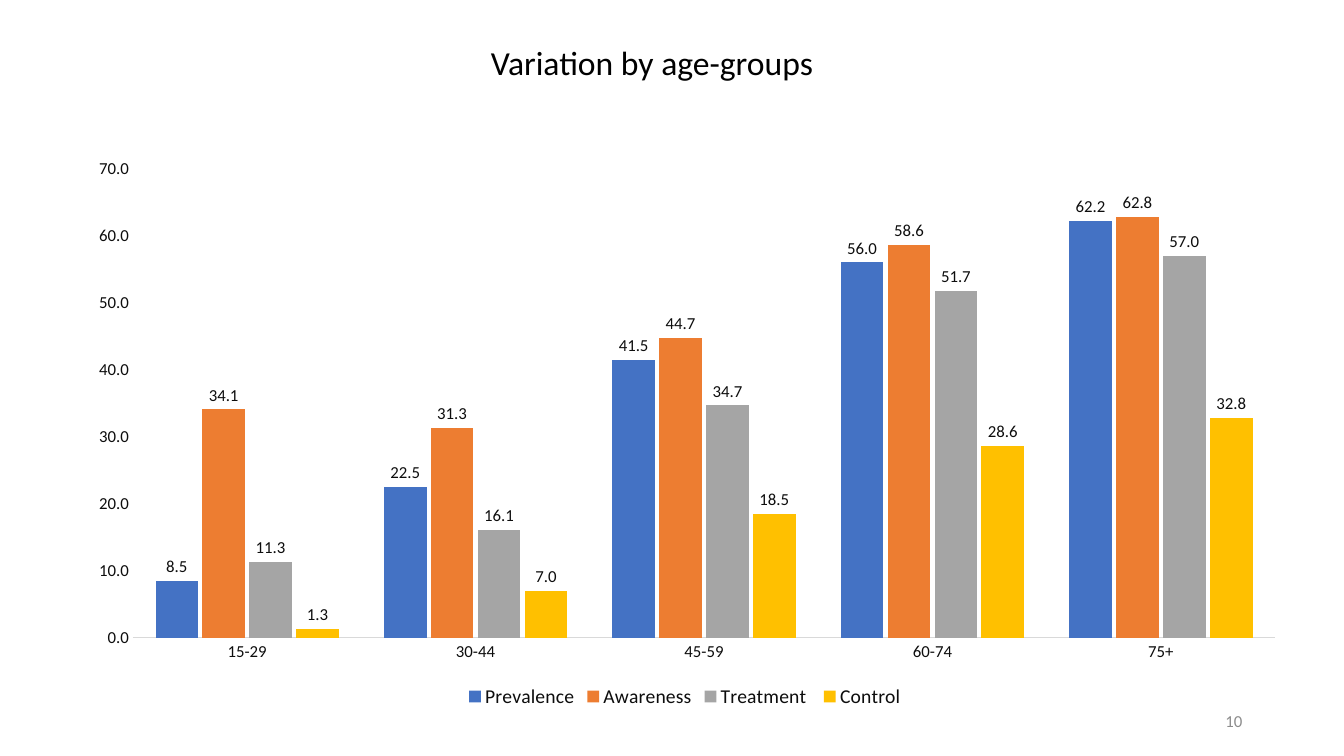
"""Build the slide on variation by age-groups."""
from pptx import Presentation
from pptx.chart.data import CategoryChartData
from pptx.dml.color import RGBColor
from pptx.enum.chart import XL_CHART_TYPE as ChartType
from pptx.enum.chart import XL_LABEL_POSITION as LabelPosition
from pptx.enum.chart import XL_LEGEND_POSITION as LegendPosition
from pptx.enum.chart import XL_TICK_MARK as TickMark
from pptx.enum.text import MSO_ANCHOR as Anchor
from pptx.enum.text import PP_ALIGN as Align
from pptx.util import Inches, Pt

FONT = "Calibri"
COLORS = {"title": "000000", "text": "0D0D0D", "number": "8C8C8C", "axis": "D9D9D9"}
TITLE = "Variation by age-groups"
PAGE_NUMBER = "10"
AGE_GROUPS = ["15-29", "30-44", "45-59", "60-74", "75+"]
SERIES = [
    ("Prevalence", "4472C4", (8.5, 22.5, 41.5, 56.0, 62.2)),
    ("Awareness", "ED7D31", (34.1, 31.3, 44.7, 58.6, 62.8)),
    ("Treatment ", "A5A5A5", (11.3, 16.1, 34.7, 51.7, 57.0)),
    ("Control ", "FFC000", (1.3, 7.0, 18.5, 28.6, 32.8)),
]
WIDTH, HEIGHT = 13.33, 7.5
TITLE_AREA = (4.77, 0.37, 4.87, 0.5)
CHART_AREA = (0.74, 1.46, 12.15, 5.61)
NUMBER_AREA = (9.42, 6.95, 3, 0.4)


def style(font, size, color):
    font.name = FONT
    font.size = Pt(size)
    font.color.rgb = RGBColor.from_string(color)


def add_text(page, area, text, size, color, align, anchor):
    box = page.shapes.add_textbox(*map(Inches, area))
    frame = box.text_frame
    frame.word_wrap = True
    frame.vertical_anchor = anchor
    para = frame.paragraphs[0]
    para.alignment = align
    span = para.add_run()
    span.text = text
    style(span.font, size, color)


def add_age_chart(page):
    data = CategoryChartData(number_format="0.0")
    data.categories = AGE_GROUPS
    for name, _, values in SERIES:
        data.add_series(name, values)
    chart = page.shapes.add_chart(
        ChartType.COLUMN_CLUSTERED, *map(Inches, CHART_AREA), data
    ).chart
    style(chart.font, 10, COLORS["title"])
    chart.has_title = False
    chart.has_legend = True
    chart.legend.position = LegendPosition.BOTTOM
    chart.legend.include_in_layout = False
    style(chart.legend.font, 14, COLORS["text"])

    for axis in (chart.category_axis, chart.value_axis):
        axis.major_tick_mark = axis.minor_tick_mark = TickMark.NONE
        axis.has_major_gridlines = False
        style(axis.tick_labels.font, 12, COLORS["text"])
    axis_line = chart.category_axis.format.line
    axis_line.color.rgb = RGBColor.from_string(COLORS["axis"])
    axis_line.width = Pt(0.75)
    scale = chart.value_axis
    scale.format.line.fill.background()
    scale.minimum_scale, scale.maximum_scale, scale.major_unit = 0, 70, 10
    scale.tick_labels.number_format = "0.0"
    scale.tick_labels.number_format_is_linked = False

    plot = chart.plots[0]
    plot.gap_width, plot.overlap = 106, -10
    plot.vary_by_categories = False
    for series, (_, color, _) in zip(plot.series, SERIES):
        series.format.fill.solid()
        series.format.fill.fore_color.rgb = RGBColor.from_string(color)
        labels = series.data_labels
        labels.show_value = True
        labels.position = LabelPosition.OUTSIDE_END
        labels.number_format = "0.0"
        labels.number_format_is_linked = False
        style(labels.font, 12, COLORS["text"])


def main():
    deck = Presentation()
    deck.slide_width, deck.slide_height = Inches(WIDTH), Inches(HEIGHT)
    page = deck.slides.add_slide(deck.slide_layouts[6])
    add_text(page, NUMBER_AREA, PAGE_NUMBER, 12, COLORS["number"], Align.RIGHT, Anchor.MIDDLE)
    add_age_chart(page)
    add_text(page, TITLE_AREA, TITLE, 24, COLORS["title"], Align.LEFT, Anchor.TOP)
    deck.save("out.pptx")


if __name__ == "__main__":
    main()
